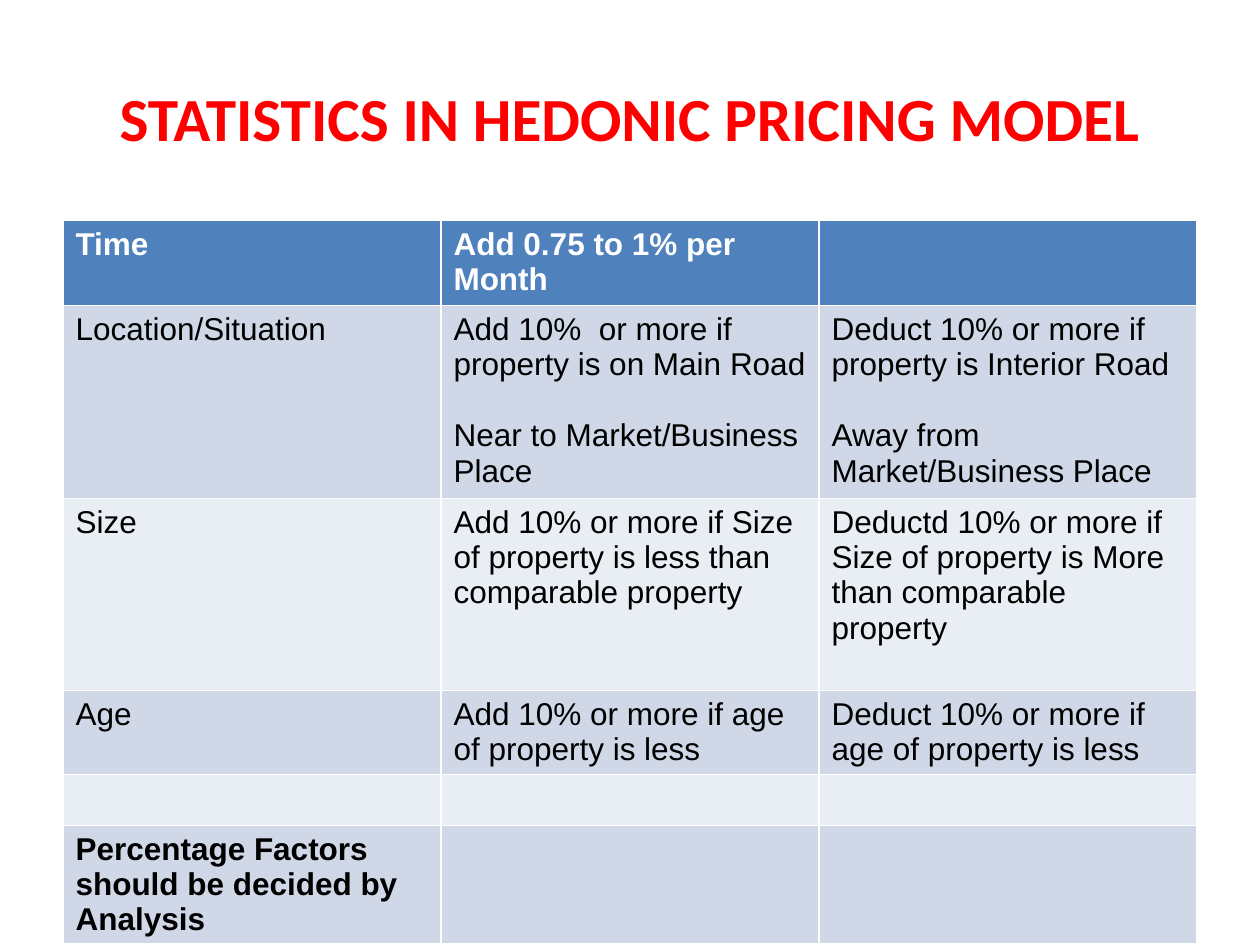
from typing import NamedTuple

from pptx import Presentation
from pptx.dml.color import RGBColor
from pptx.enum.text import MSO_ANCHOR, PP_ALIGN
from pptx.util import Cm, Pt

RED = RGBColor(0xFF, 0x00, 0x00)
WHITE = RGBColor(0xFF, 0xFF, 0xFF)
BLACK = RGBColor(0x00, 0x00, 0x00)
HEADER_BLUE = RGBColor(0x4F, 0x81, 0xBD)
BAND_DARK = RGBColor(0xD0, 0xD8, 0xE8)
BAND_LIGHT = RGBColor(0xE9, 0xED, 0xF4)

LEFT, WIDTH = Cm(1.27), Cm(22.86)
PARAGRAPH_GAP = Pt(20.5)


class FactorRow(NamedTuple):
    height: float  # centimetres
    fill: RGBColor
    cells: tuple[str, str, str]  # a line break starts a new paragraph
    color: RGBColor = BLACK
    bold: bool = False


ROWS = [
    FactorRow(1.71, HEADER_BLUE, ("Time", "Add 0.75 to 1% per Month", ""), WHITE, True),
    FactorRow(3.89, BAND_DARK, (
        "Location/Situation",
        "Add 10%  or more if property is on Main Road\nNear to Market/Business Place",
        "Deduct 10% or more if property is Interior Road\nAway from Market/Business Place",
    )),
    FactorRow(3.87, BAND_LIGHT, (
        "Size",
        "Add 10% or more if Size of property is less than comparable property",
        "Deductd 10% or more if Size of property is More than comparable property",
    )),
    FactorRow(1.69, BAND_DARK, (
        "Age",
        "Add 10% or more if age of property is less",
        "Deduct 10% or more if age of property is less",
    )),
    FactorRow(1.03, BAND_LIGHT, ("", "", "")),
    FactorRow(2.36, BAND_DARK,
              ("Percentage Factors should be decided by Analysis", "", ""), bold=True),
]


def set_title(page, text: str) -> None:
    title = page.shapes.title
    title.left, title.top, title.width, title.height = LEFT, Cm(0.76), WIDTH, Cm(3.18)
    title.text_frame.text = text
    title.text_frame.vertical_anchor = MSO_ANCHOR.MIDDLE
    para = title.text_frame.paragraphs[0]
    para.alignment = PP_ALIGN.CENTER
    font = para.font
    font.name, font.size, font.bold = "Calibri", Pt(35), True
    font.color.rgb = RED


def fill_cell(cell, text: str, row: FactorRow) -> None:
    cell.fill.solid()
    cell.fill.fore_color.rgb = row.fill
    cell.text_frame.text = text
    for index, para in enumerate(cell.text_frame.paragraphs):
        if index:
            para.space_before = PARAGRAPH_GAP
        font = para.font
        font.name, font.size, font.bold = "Arial", Pt(18), row.bold
        font.color.rgb = row.color


def add_factor_table(page, rows: list[FactorRow]) -> None:
    height = Cm(sum(row.height for row in rows))
    table = page.shapes.add_table(
        len(rows), len(rows[0].cells), LEFT, Cm(4.45), WIDTH, height).table
    for table_row, row in zip(table.rows, rows):
        table_row.height = Cm(row.height)
        for cell, text in zip(table_row.cells, row.cells):
            fill_cell(cell, text, row)


def main() -> None:
    deck = Presentation()
    deck.slide_width, deck.slide_height = Cm(25.4), Cm(19.05)
    page = deck.slides.add_slide(deck.slide_layouts[5])  # title only
    set_title(page, "STATISTICS IN HEDONIC PRICING MODEL")
    add_factor_table(page, ROWS)
    deck.save("out.pptx")


if __name__ == "__main__":
    main()
